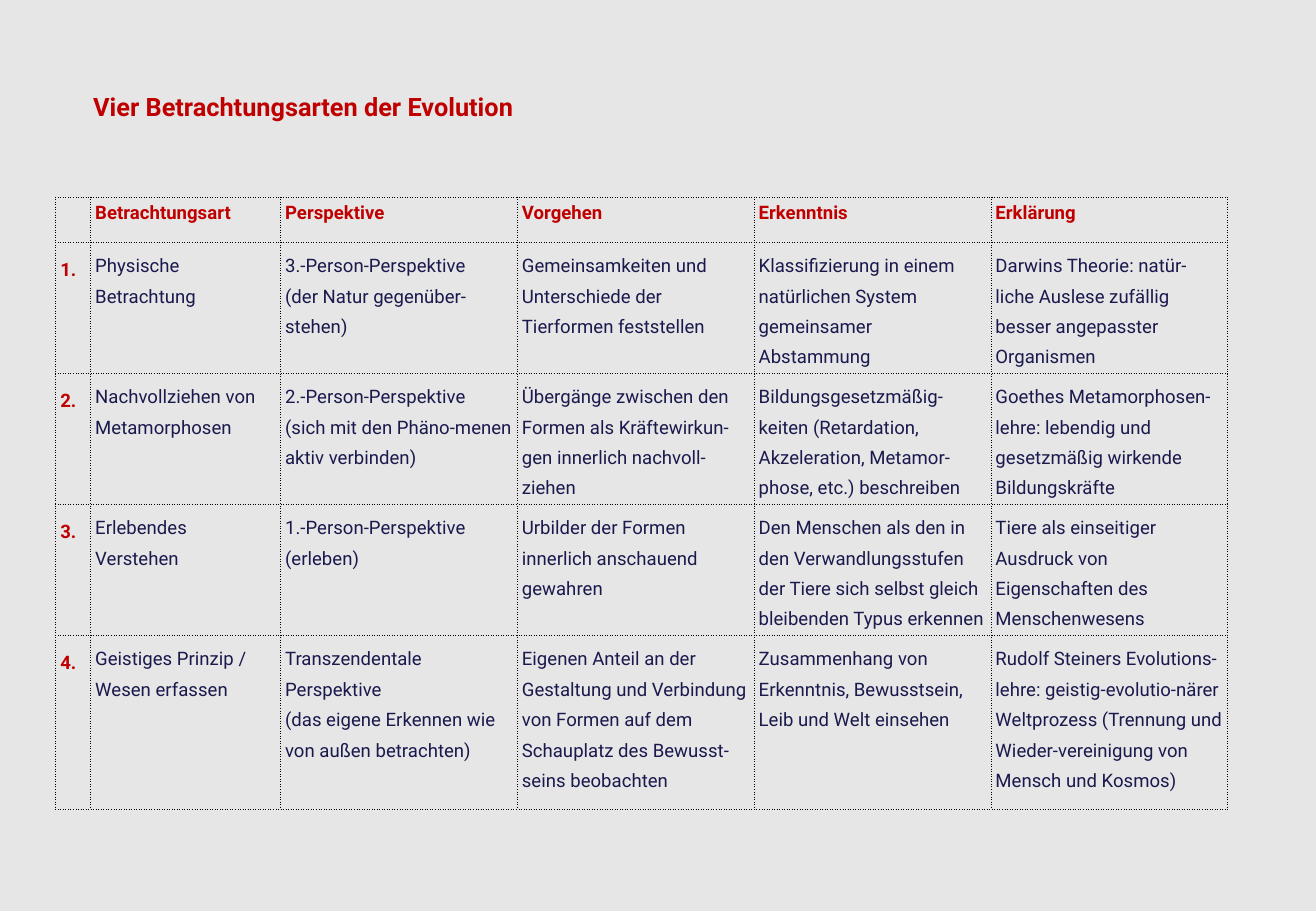
from dataclasses import dataclass

from lxml.etree import SubElement
from pptx import Presentation
from pptx.dml.color import RGBColor
from pptx.enum.shapes import MSO_SHAPE
from pptx.enum.text import MSO_ANCHOR
from pptx.oxml.ns import qn
from pptx.util import Cm, Pt


@dataclass(frozen=True)
class Theme:
    font: str = "Roboto"
    background: str = "E6E6E6"
    accent: str = "C00000"
    body: str = "19194D"
    border: str = "000000"
    title_size: float = 15
    table_size: float = 11
    border_width: float = 0.25


THEME = Theme()
SLIDE_WIDTH, SLIDE_HEIGHT = Cm(27.51), Cm(19.05)
COLUMN_WIDTHS = [0.73, 3.97, 4.95, 4.95, 4.95, 4.95]
ROW_HEIGHTS = [0.94, 2.72, 2.72, 2.72, 3.63]
CELL_MARGIN = Cm(0.1)

HEADINGS = ["", "Betrachtungsart", "Perspektive", "Vorgehen", "Erkenntnis", "Erklärung"]
# A line feed starts a new paragraph.
VIEWS = [
    [
        "Physische Betrachtung",
        "3.-Person-Perspektive\n(der Natur gegenüber-stehen)",
        "Gemeinsamkeiten und Unterschiede der Tierformen feststellen",
        "Klassifizierung in einem natürlichen System gemeinsamer Abstammung",
        "Darwins Theorie: natür-liche Auslese zufällig besser angepasster Organismen",
    ],
    [
        "Nachvollziehen von Metamorphosen",
        "2.-Person-Perspektive\n(sich mit den Phäno-menen aktiv verbinden)",
        "Übergänge zwischen den Formen als Kräftewirkun-gen innerlich nachvoll-ziehen",
        "Bildungsgesetzmäßig-keiten (Retardation, Akzeleration, Metamor-phose, etc.) "
        "beschreiben",
        "Goethes Metamorphosen-lehre: lebendig und gesetzmäßig wirkende Bildungskräfte",
    ],
    [
        "Erlebendes\nVerstehen",
        "1.-Person-Perspektive (erleben)",
        "Urbilder der Formen innerlich anschauend gewahren",
        "Den Menschen als den in den Verwandlungsstufen der Tiere sich selbst gleich "
        "bleibenden Typus erkennen",
        "Tiere als einseitiger Ausdruck von Eigenschaften des Menschenwesens",
    ],
    [
        "Geistiges Prinzip / Wesen erfassen",
        "Transzendentale Perspektive\n(das eigene Erkennen wie\nvon außen betrachten)",
        "Eigenen Anteil an der Gestaltung und Verbindung von Formen auf dem Schauplatz "
        "des Bewusst-seins beobachten",
        "Zusammenhang von Erkenntnis, Bewusstsein, Leib und Welt einsehen",
        "Rudolf Steiners Evolutions-lehre: geistig-evolutio-närer Weltprozess (Trennung "
        "und Wieder-vereinigung von Mensch und Kosmos)",
    ],
]


def style_paragraph(paragraph, size, color, bold):
    font = paragraph.font
    font.name = THEME.font
    font.size = Pt(size)
    font.bold = bold
    font.color.rgb = RGBColor.from_string(color)


def add_background(slide):
    shape = slide.shapes.add_shape(MSO_SHAPE.RECTANGLE, 0, 0, SLIDE_WIDTH, SLIDE_HEIGHT)
    shape.shadow.inherit = False
    shape.fill.solid()
    shape.fill.fore_color.rgb = RGBColor.from_string(THEME.background)
    shape.line.fill.background()


def add_title(slide, text):
    text_frame = slide.shapes.add_textbox(Cm(1.7), Cm(1.78), Cm(18.34), Cm(0.89)).text_frame
    text_frame.word_wrap = True
    text_frame.text = text
    style_paragraph(text_frame.paragraphs[0], THEME.title_size, THEME.accent, True)


def add_dotted_borders(cell):
    properties = cell._tc.get_or_add_tcPr()
    for side in ("lnL", "lnR", "lnT", "lnB"):
        line = SubElement(properties, qn(f"a:{side}"), w=str(Pt(THEME.border_width)))
        fill = SubElement(line, qn("a:solidFill"))
        SubElement(fill, qn("a:srgbClr"), val=THEME.border)
        SubElement(line, qn("a:prstDash"), val="sysDot")


def fill_cell(cell, text, is_heading, is_number):
    add_dotted_borders(cell)
    cell.fill.background()
    cell.vertical_anchor = MSO_ANCHOR.TOP
    cell.margin_left = cell.margin_right = CELL_MARGIN
    cell.margin_top = cell.margin_bottom = CELL_MARGIN
    cell.text = text
    highlighted = is_heading or is_number
    color = THEME.accent if highlighted else THEME.body
    for paragraph in cell.text_frame.paragraphs:
        style_paragraph(paragraph, THEME.table_size, color, highlighted)
        if is_heading:
            paragraph.space_before = Pt(3)
        else:
            paragraph.line_spacing = Pt(20 if is_number else 18)


def add_views_table(slide):
    rows = [HEADINGS] + [[f"{number}.", *view] for number, view in enumerate(VIEWS, 1)]
    table = slide.shapes.add_table(
        len(rows), len(HEADINGS), Cm(1.16), Cm(4.12),
        Cm(sum(COLUMN_WIDTHS)), Cm(sum(ROW_HEIGHTS)),
    ).table
    table.first_row = table.horz_banding = False
    for column, width in zip(table.columns, COLUMN_WIDTHS):
        column.width = Cm(width)
    for row, height in zip(table.rows, ROW_HEIGHTS):
        row.height = Cm(height)
    for row_index, texts in enumerate(rows):
        for column_index, text in enumerate(texts):
            cell = table.cell(row_index, column_index)
            fill_cell(cell, text, row_index == 0, column_index == 0)


def main():
    presentation = Presentation()
    presentation.slide_width = SLIDE_WIDTH
    presentation.slide_height = SLIDE_HEIGHT
    slide = presentation.slides.add_slide(presentation.slide_layouts[6])
    add_background(slide)
    add_views_table(slide)
    add_title(slide, "Vier Betrachtungsarten der Evolution")
    presentation.save("out.pptx")


if __name__ == "__main__":
    main()
